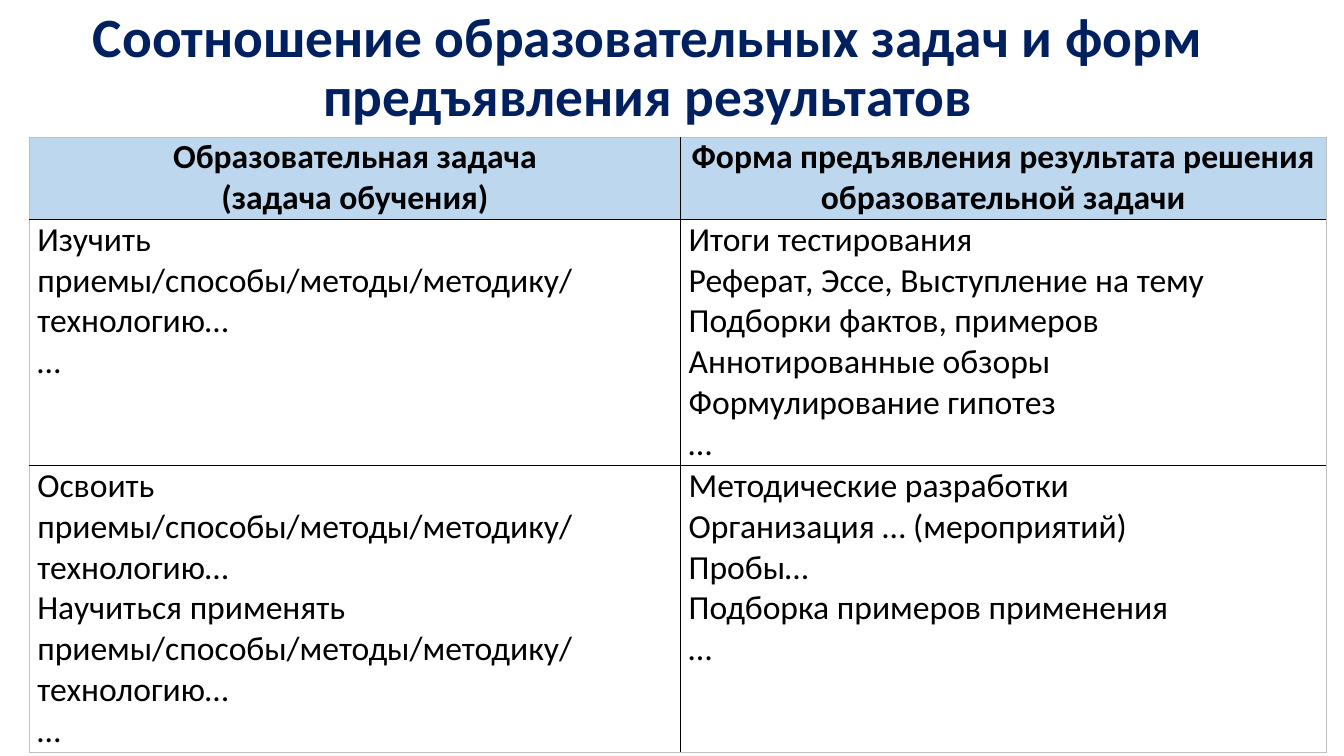
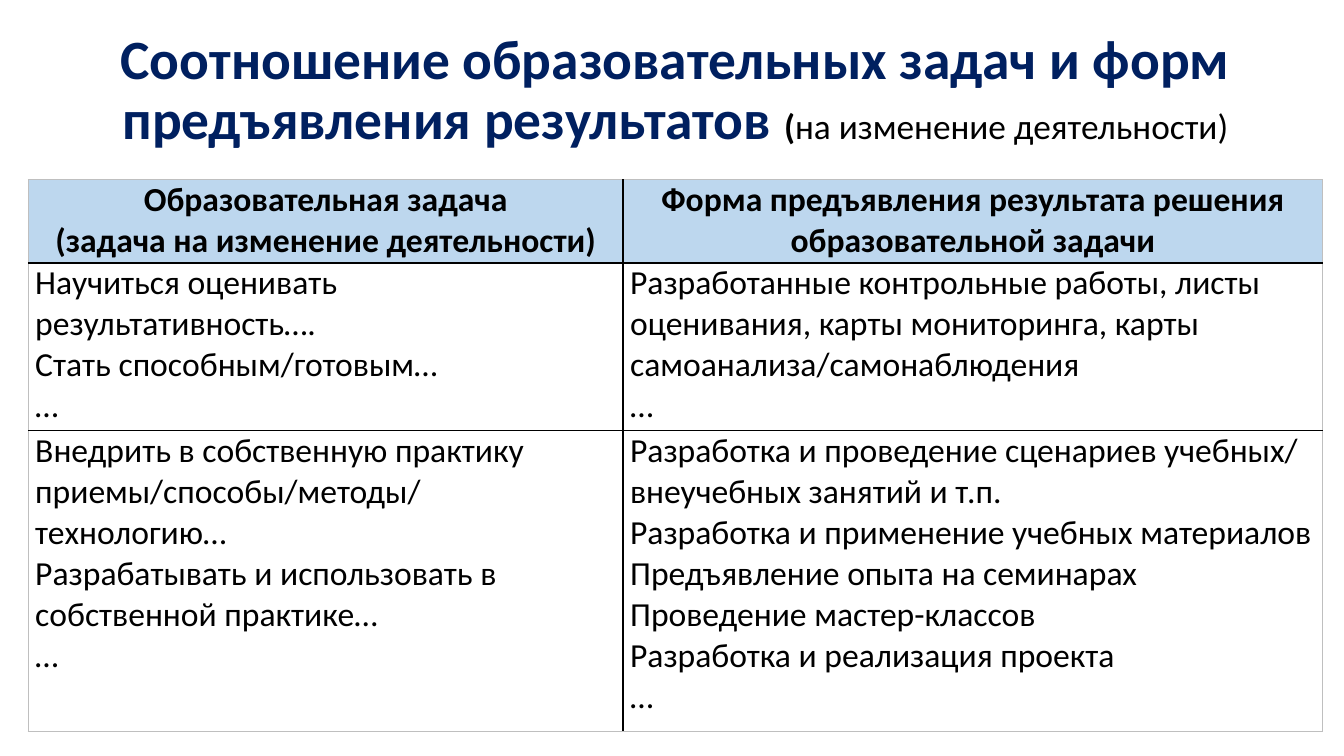
from lxml import etree
from pptx import Presentation
from pptx.dml.color import RGBColor
from pptx.enum import text
from pptx.oxml import ns
from pptx.util import Inches, Pt

COLORS = {
    "title": "002060",
    "text": "000000",
    "header": "BDD7EE",
    "paper": "FFFFFF",
    "grid": "000000",
    "frame": "BFBFBF",
}
FONT = "Calibri"
TITLE = "Соотношение образовательных задач и форм предъявления результатов"
RESULT_HEADER = ["Форма предъявления результата решения образовательной задачи"]


def add_text(paragraph, content, size=24, color="text", bold=False):
    run = paragraph.add_run()
    run.text = content
    run.font.name = FONT
    run.font.size = Pt(size)
    run.font.bold = bold
    run.font.color.rgb = RGBColor.from_string(COLORS[color])


class Deck:
    def __init__(self):
        self.presentation = Presentation()
        self.presentation.slide_width = Inches(13.33)
        self.presentation.slide_height = Inches(7.5)
        self.slide = None

    def new_slide(self):
        layout = self.presentation.slide_layouts[5]
        self.slide = self.presentation.slides.add_slide(layout)

    def title(self, left, top, width, height, parts):
        shape = self.slide.shapes.title
        shape.left, shape.top = Inches(left), Inches(top)
        shape.width, shape.height = Inches(width), Inches(height)
        frame = shape.text_frame
        frame.word_wrap = True
        frame.auto_size = text.MSO_AUTO_SIZE.NONE
        frame.vertical_anchor = text.MSO_ANCHOR.MIDDLE
        paragraph = frame.paragraphs[0]
        paragraph.alignment = text.PP_ALIGN.CENTER
        paragraph.line_spacing = 0.9
        for content, style in parts:
            add_text(paragraph, content, **style)

    def table(self, left, top, widths, heights, rows, inset):
        shape = self.slide.shapes.add_table(
            len(rows), len(widths), Inches(left), Inches(top),
            Inches(sum(widths)), Inches(sum(heights)))
        table = shape.table
        table.horz_banding = False
        for column, width in zip(table.columns, widths):
            column.width = Inches(width)
        for row, height in zip(table.rows, heights):
            row.height = Inches(height)
        for i, row in enumerate(rows):
            for j, lines in enumerate(row):
                cell = table.cell(i, j)
                outer = {"L": j == 0, "R": j == len(widths) - 1,
                         "T": i == 0, "B": i == len(rows) - 1}
                self.borders(cell, outer)
                self.cell(cell, lines, inset, header=i == 0)

    def borders(self, cell, outer):
        properties = cell._tc.get_or_add_tcPr()
        for side, is_outer in outer.items():
            line = etree.SubElement(properties, ns.qn(f"a:ln{side}"),
                                    w=str(Pt(0.5 if is_outer else 1)))
            fill = etree.SubElement(line, ns.qn("a:solidFill"))
            etree.SubElement(fill, ns.qn("a:srgbClr"),
                             val=COLORS["frame" if is_outer else "grid"])

    def cell(self, cell, lines, inset, header):
        cell.margin_left = cell.margin_right = Inches(inset)
        cell.margin_top = cell.margin_bottom = 0
        cell.fill.solid()
        cell.fill.fore_color.rgb = RGBColor.from_string(
            COLORS["header" if header else "paper"])
        frame = cell.text_frame
        for index, content in enumerate(lines):
            paragraph = frame.add_paragraph() if index else frame.paragraphs[0]
            paragraph.alignment = (text.PP_ALIGN.CENTER if header
                                   else text.PP_ALIGN.LEFT)
            add_text(paragraph, content, bold=header)


def main():
    deck = Deck()
    title_style = {"size": 39.6, "color": "title", "bold": True}

    deck.new_slide()
    deck.title(0.29, 0.11, 12.27, 1.15, [(TITLE, title_style)])
    deck.table(0.29, 1.36, [6.46, 6.4], [0.81, 2.44, 2.85], [
        [["Образовательная задача", "(задача обучения)"], RESULT_HEADER],
        [["Изучить приемы/способы/методы/методику/ технологию…", "…"],
         ["Итоги тестирования",
          "Реферат, Эссе, Выступление на тему",
          "Подборки фактов, примеров",
          "Аннотированные обзоры",
          "Формулирование гипотез",
          "…"]],
        [["Освоить приемы/способы/методы/методику/ технологию…",
          "Научиться применять приемы/способы/методы/методику/ технологию…",
          "…"],
         ["Методические разработки",
          "Организация … (мероприятий)",
          "Пробы…",
          "Подборка примеров применения",
          "…"]],
    ], inset=0.08)

    deck.new_slide()
    deck.title(0.55, 0.45, 12.3, 0.91, [
        (TITLE + " ", title_style),
        ("(", {"size": 25.2, "bold": True}),
        ("на изменение деятельности)", {"size": 25.2}),
    ])
    deck.table(0.28, 1.78, [5.9, 6.94], [0.83, 1.66, 2.99], [
        [["Образовательная задача", "(задача на изменение деятельности)"],
         RESULT_HEADER],
        [["Научиться оценивать результативность….",
          "Стать способным/готовым…",
          "…"],
         ["Разработанные контрольные работы, листы оценивания, "
          "карты мониторинга, карты самоанализа/самонаблюдения",
          "…"]],
        [["Внедрить в собственную практику приемы/способы/методы/ технологию…",
          "Разрабатывать и использовать в собственной практике…",
          "…"],
         ["Разработка и проведение сценариев учебных/ внеучебных занятий и т.п.",
          "Разработка и применение учебных материалов",
          "Предъявление опыта на семинарах",
          "Проведение мастер-классов",
          "Разработка и реализация проекта",
          "…"]],
    ], inset=0.07)

    deck.presentation.save("out.pptx")


if __name__ == "__main__":
    main()
